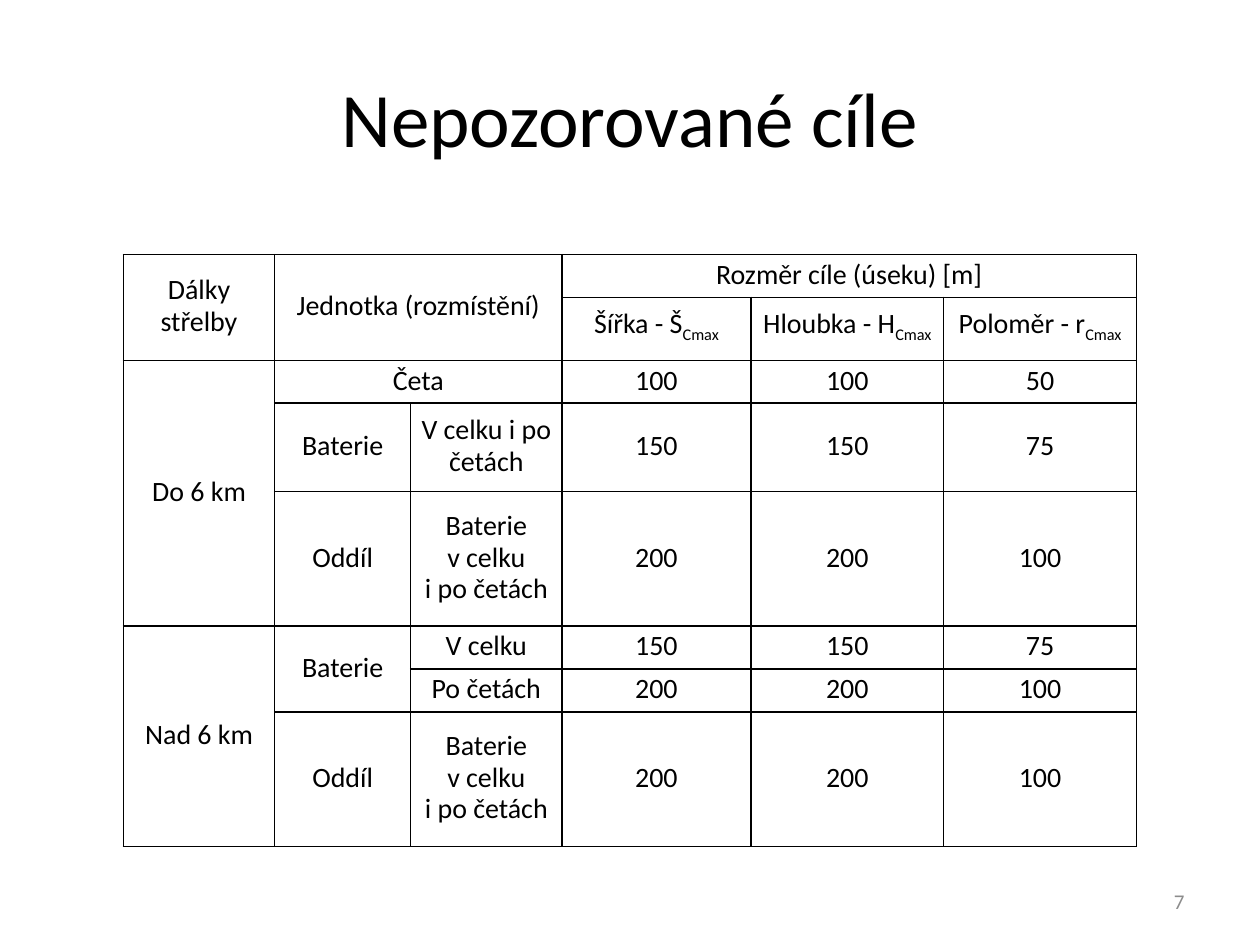
from lxml.etree import SubElement
from pptx import Presentation
from pptx.dml.color import RGBColor
from pptx.enum.text import MSO_ANCHOR as Anchor, PP_ALIGN as Align
from pptx.oxml.ns import qn
from pptx.util import Inches, Pt

BLACK = RGBColor(0, 0, 0)
GREY = RGBColor(0x8C, 0x8C, 0x8C)
FONT = "Calibri"

TITLE = "Nepozorované cíle"
NUMBER = "7"

# "~" is a no-break space, "_" starts a subscript, None is a merged-away cell
SPLIT = "Baterie v~celku\ni~po četách"
ROWS = [
    ["Dálky střelby", "Jednotka (rozmístění)", None, "Rozměr cíle (úseku) [m]", None, None],
    [None, None, None, "Šířka - Š_Cmax", "Hloubka - H_Cmax", "Poloměr - r_Cmax"],
    ["Do 6 km", "Četa", None, "100", "100", "50"],
    [None, "Baterie", "V~celku i~po četách", "150", "150", "75"],
    [None, "Oddíl", SPLIT, "200", "200", "100"],
    ["Nad 6 km", "Baterie", "V~celku", "150", "150", "75"],
    [None, None, "Po četách", "200", "200", "100"],
    [None, "Oddíl", SPLIT, "200", "200", "100"],
]
# first row, first column, last row, last column
SPANS = [(0, 0, 1, 0), (0, 1, 1, 2), (0, 3, 0, 5), (2, 0, 4, 0),
         (2, 1, 2, 2), (5, 0, 7, 0), (5, 1, 6, 1)]
WIDTHS = [1.2, 1.08, 1.2, 1.5, 1.53, 1.53]
HEIGHTS = [0.34, 0.5, 0.34, 0.7, 1.07, 0.34, 0.34, 1.07]


def style(run, size, color=BLACK):
    run.font.name = FONT
    run.font.size = Pt(size)
    run.font.color.rgb = color


def add_text(slide, box, text, size, color, align):
    frame = slide.shapes.add_textbox(*map(Inches, box)).text_frame
    frame.word_wrap = True
    frame.vertical_anchor = Anchor.MIDDLE
    para = frame.paragraphs[0]
    para.text = text
    para.alignment = align
    style(para.runs[0], size, color)


def add_borders(cell):
    props = cell._tc.get_or_add_tcPr()
    for side in ("lnL", "lnR", "lnT", "lnB"):
        line = SubElement(props, qn(f"a:{side}"), w=str(Pt(1)))
        fill = SubElement(line, qn("a:solidFill"))
        SubElement(fill, qn("a:srgbClr"), val=str(BLACK))


def fill_cell(cell, text):
    cell.margin_left = cell.margin_right = Inches(0.07)
    cell.margin_top = cell.margin_bottom = 0
    cell.vertical_anchor = Anchor.MIDDLE
    add_borders(cell)
    cell.fill.background()
    if text is None:
        return
    cell.text_frame.text = text.replace("~", chr(160))
    for para in cell.text_frame.paragraphs:
        para.alignment = Align.CENTER
        para.line_spacing = Pt(18)
        base, _, sub = para.text.partition("_")
        para.text = base
        if sub:
            run = para.add_run()
            run.text = sub
            run.font._element.set("baseline", "-25000")
        for run in para.runs:
            style(run, 16)


def add_grid(slide):
    grid = slide.shapes.add_table(
        len(ROWS), len(WIDTHS), Inches(0.98), Inches(2.02),
        Inches(sum(WIDTHS)), Inches(sum(HEIGHTS))).table
    grid.first_row = grid.horz_banding = False
    for col, width in zip(grid.columns, WIDTHS):
        col.width = Inches(width)
    for row, height, texts in zip(grid.rows, HEIGHTS, ROWS):
        row.height = Inches(height)
        for cell, text in zip(row.cells, texts):
            fill_cell(cell, text)
    for top, left, bottom, right in SPANS:
        grid.cell(top, left).merge(grid.cell(bottom, right))


def main():
    deck = Presentation()
    deck.slide_width, deck.slide_height = Inches(10), Inches(7.5)
    slide = deck.slides.add_slide(deck.slide_layouts[6])
    add_text(slide, (0.5, 0.3, 9, 1.25), TITLE, 44, BLACK, Align.CENTER)
    add_grid(slide)
    add_text(slide, (7.17, 6.95, 2.33, 0.4), NUMBER, 12, GREY, Align.RIGHT)
    deck.save("out.pptx")


if __name__ == "__main__":
    main()
